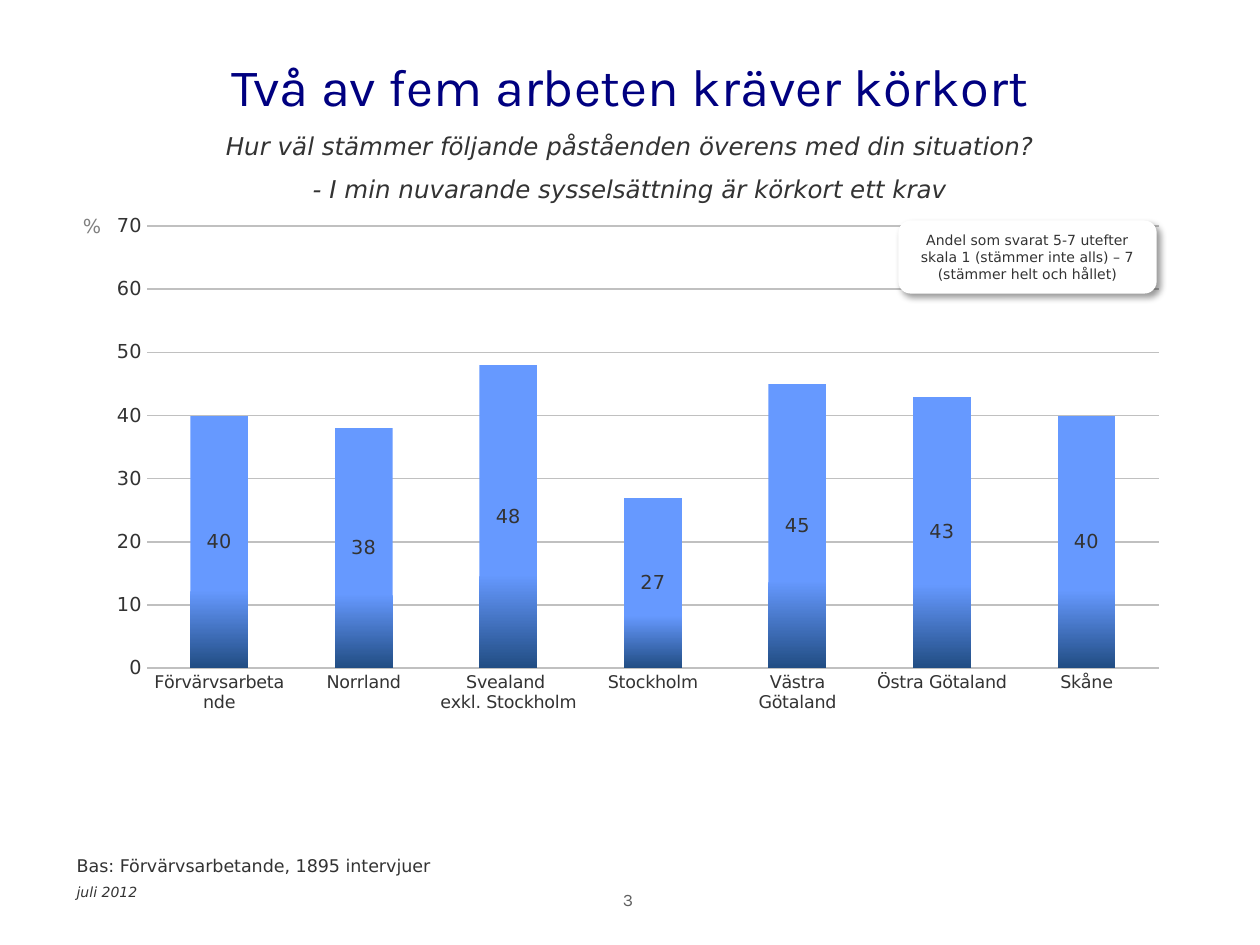
"""Build a survey slide with a column chart of jobs requiring a driving licence by region."""
from dataclasses import dataclass

from lxml.etree import SubElement
from pptx import Presentation
from pptx.chart.data import CategoryChartData
from pptx.dml.color import RGBColor
from pptx.enum.chart import XL_CHART_TYPE as ChartType
from pptx.enum.chart import XL_LABEL_POSITION as LabelPos
from pptx.enum.chart import XL_TICK_MARK as Tick
from pptx.enum.shapes import MSO_SHAPE as Preset
from pptx.enum.text import MSO_ANCHOR as Anchor
from pptx.enum.text import PP_ALIGN as Align
from pptx.oxml import parse_xml
from pptx.oxml.ns import nsdecls, qn
from pptx.util import Inches, Pt

NAVY = RGBColor(0x00, 0x00, 0x80)
DARK = RGBColor(0x33, 0x33, 0x33)
GREY = RGBColor(0x80, 0x80, 0x80)
SLATE = RGBColor(0x5F, 0x5F, 0x5F)
SILVER = RGBColor(0xC0, 0xC0, 0xC0)
WHITE = RGBColor(0xFF, 0xFF, 0xFF)
SKY = RGBColor(0x66, 0x99, 0xFF)
STEEL = RGBColor(0x21, 0x4D, 0x83)
BLACK = RGBColor(0x00, 0x00, 0x00)
BODY, HEADING = "DejaVu Sans", "Karla"
SHARES = {
    "Förvärvsarbetande": 40,
    "Norrland": 38,
    "Svealand \nexkl. Stockholm": 48,
    "Stockholm": 27,
    "Västra Götaland": 45,
    "Östra Götaland": 43,
    "Skåne": 40,
}


@dataclass(frozen=True)
class Label:
    text: str
    box: tuple[float, float, float, float]
    size: float
    color: RGBColor = DARK
    font: str = BODY
    italic: bool = False
    align: Align = Align.LEFT
    anchor: Anchor = Anchor.TOP


LABELS = [
    Label("Två av fem arbeten kräver körkort", (0, 0.05, 10, 1.25), 30, NAVY,
          HEADING, align=Align.CENTER, anchor=Anchor.MIDDLE),
    Label("Hur väl stämmer följande påståenden överens med din situation?\n"
          "- I min nuvarande sysselsättning är körkort ett krav",
          (0.51, 0.99, 8.98, 1.04), 14, italic=True, align=Align.CENTER),
    Label("%", (0.56, 1.65, 0.39, 0.29), 11, GREY),
    Label("Bas: Förvärvsarbetande, 1895 intervjuer", (0.51, 6.74, 4.49, 0.27), 10),
    Label("juli 2012", (0.51, 6.96, 3.17, 0.38), 8, italic=True),
    Label("3", (3.82, 7.01, 2.33, 0.52), 10, SLATE, HEADING, align=Align.CENTER),
]
CALLOUT = Label("Andel som svarat 5-7 utefter skala 1 (stämmer inte alls) – 7 "
                "(stämmer helt och hållet)", (7.13, 1.75, 2.05, 0.58), 8,
                align=Align.CENTER, anchor=Anchor.MIDDLE)


def style_font(font, size: float, color: RGBColor, name: str = BODY) -> None:
    font.size, font.name = Pt(size), name
    font.color.rgb = color


def write_text(sp, label: Label) -> None:
    tf = sp.text_frame
    tf.word_wrap = True
    tf.vertical_anchor = label.anchor
    tf.text = label.text
    for i, p in enumerate(tf.paragraphs):
        p.alignment = label.align
        if i:
            p.space_before = Pt(label.size * 0.55)
        for r in p.runs:
            style_font(r.font, label.size, label.color, label.font)
            r.font.italic = label.italic


def add_label(slide, label: Label) -> None:
    write_text(slide.shapes.add_textbox(*map(Inches, label.box)), label)


def add_callout(slide, label: Label) -> None:
    sp = slide.shapes.add_shape(Preset.ROUNDED_RECTANGLE, *map(Inches, label.box))
    sp.fill.solid()
    sp.fill.fore_color.rgb = WHITE
    sp.line.fill.background()
    write_text(sp, label)
    tf = sp.text_frame
    tf.margin_top = tf.margin_bottom = Inches(0.06)
    sp.shadow.inherit = False
    effects = sp.fill._xPr.find(qn("a:effectLst"))
    effects.append(parse_xml(
        f'<a:outerShdw {nsdecls("a")} blurRad="{Pt(4)}" dist="{Pt(3)}" dir="2700000" '
        f'algn="tl" rotWithShape="0"><a:srgbClr val="{BLACK}"><a:alpha val="40000"/>'
        '</a:srgbClr></a:outerShdw>'))


def set_plot_area(chart, x: float, y: float, w: float, h: float) -> None:
    area = chart._chartSpace.chart.plotArea
    for old in area.findall(qn("c:layout")):
        area.remove(old)
    layout = parse_xml(f'<c:layout {nsdecls("c")}/>')
    manual = SubElement(layout, qn("c:manualLayout"))
    settings = {"layoutTarget": "inner", "xMode": "edge", "yMode": "edge",
                "x": x, "y": y, "w": w, "h": h}
    for tag, val in settings.items():
        SubElement(manual, qn(f"c:{tag}")).set("val", str(val))
    area.insert(0, layout)


def style_axis(axis, size: float) -> None:
    axis.major_tick_mark = axis.minor_tick_mark = Tick.NONE
    axis.format.line.fill.background()
    style_font(axis.tick_labels.font, size, DARK)


def fill_columns(series) -> None:
    fill = series.format.fill
    fill.gradient()
    fill.gradient_angle = 270
    for stop, color, pos in zip(fill.gradient_stops, (SKY, STEEL), (0.69, 1)):
        stop.color.rgb, stop.position = color, pos


def add_share_chart(slide) -> None:
    data = CategoryChartData(number_format="0")
    data.categories = list(SHARES)
    data.add_series("Series 1", list(SHARES.values()))
    box = map(Inches, (0.59, 1.7, 8.73, 4.89))
    chart = slide.shapes.add_chart(ChartType.COLUMN_CLUSTERED, *box, data).chart
    chart.has_legend = chart.has_title = False
    style_font(chart.font, 8.8, BLACK, "Arial")
    set_plot_area(chart, 0.066, 0.019, 0.92, 0.718)

    style_axis(chart.category_axis, 10)
    axis = chart.value_axis
    style_axis(axis, 11)
    axis.minimum_scale, axis.maximum_scale, axis.major_unit = 0, 70, 10
    axis.major_gridlines.format.line.color.rgb = SILVER
    axis.major_gridlines.format.line.width = Pt(0.88)

    plot = chart.plots[0]
    plot.gap_width, plot.vary_by_categories = 150, False
    fill_columns(plot.series[0])
    plot.has_data_labels = True
    labels = plot.data_labels
    labels.show_value, labels.position = True, LabelPos.CENTER
    labels.number_format, labels.number_format_is_linked = "0", False
    style_font(labels.font, 11, DARK)


def main() -> None:
    prs = Presentation()
    prs.slide_width, prs.slide_height = Inches(10), Inches(7.5)
    slide = prs.slides.add_slide(prs.slide_layouts[6])
    add_share_chart(slide)
    for label in LABELS:
        add_label(slide, label)
    add_callout(slide, CALLOUT)
    prs.save("out.pptx")


if __name__ == "__main__":
    main()
